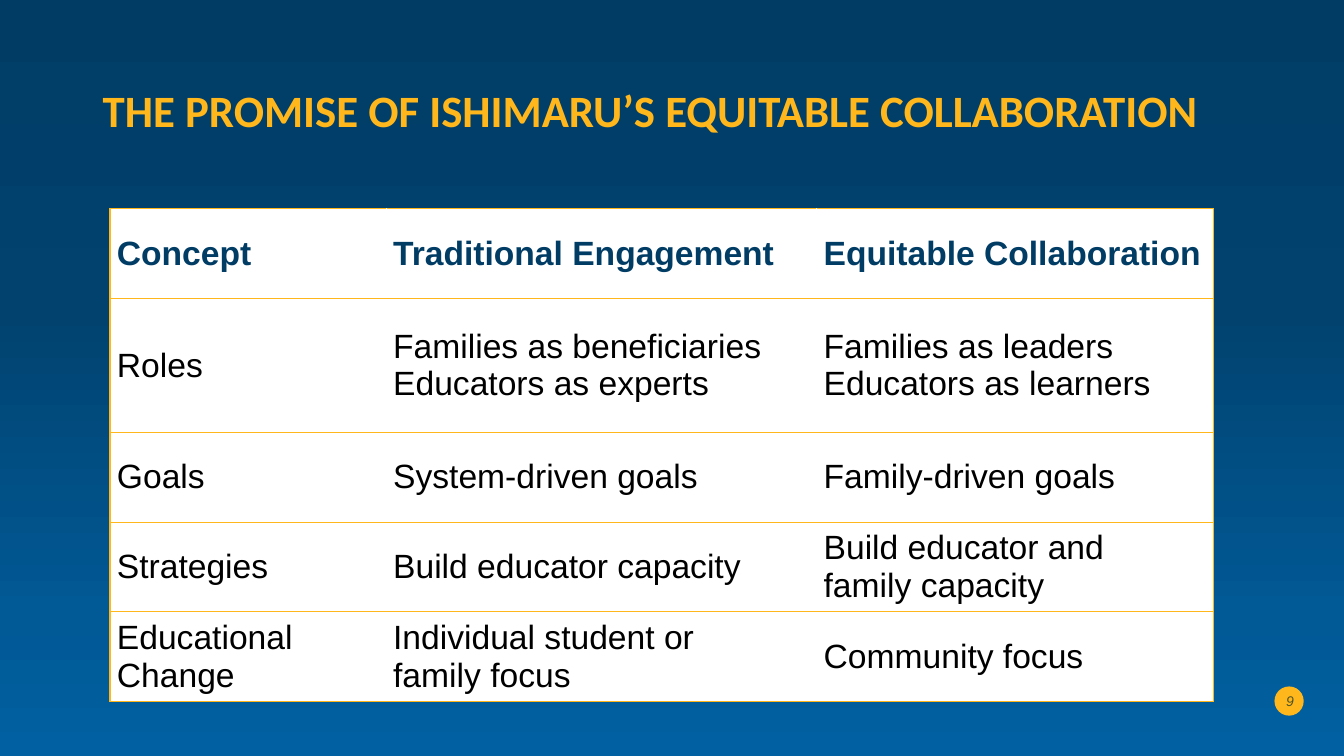
"""Build the slide that compares traditional engagement with equitable collaboration."""
from dataclasses import dataclass

from lxml.etree import SubElement
from pptx import Presentation
from pptx.dml.color import RGBColor as RGB
from pptx.enum.shapes import MSO_SHAPE as SHAPE
from pptx.enum.text import MSO_ANCHOR as ANCHOR, PP_ALIGN as ALIGN
from pptx.oxml import parse_xml
from pptx.oxml.ns import nsdecls, qn
from pptx.util import Inches, Pt


@dataclass(frozen=True)
class Theme:
    gold: str = "FFB71B"
    pale_gold: str = "FFE6B1"
    navy: str = "013C65"
    white: str = "FFFFFF"
    black: str = "000000"
    number: str = "00292E"
    gradient: tuple = ((0, "013C65"), (41, "01426F"), (81, "015995"), (100, "0160A1"))
    title_size: int = 32
    table_size: int = 24
    number_size: int = 10


theme = Theme()


def write_text(tf, text, size, color, font="Arial", bold=False, italic=False, align=ALIGN.LEFT, spacing=None):
    tf.text = text
    tf.word_wrap = True
    tf.vertical_anchor = ANCHOR.MIDDLE
    for p in tf.paragraphs:
        p.alignment = align
        p.line_spacing = spacing
        for r in p.runs:
            r.font.name, r.font.size = font, Pt(size)
            r.font.bold, r.font.italic = bold, italic
            r.font.color.rgb = RGB.from_string(color)


def line_xml(tag, color, points):
    return parse_xml(
        f'<a:{tag} {nsdecls("a")} w="{Pt(points)}"><a:solidFill>'
        f'<a:srgbClr val="{color}"/></a:solidFill></a:{tag}>'
    )


prs = Presentation()
prs.slide_width, prs.slide_height = Inches(13.33), Inches(7.5)
s = prs.slides.add_slide(prs.slide_layouts[6])

bg = s.background.fill
bg.gradient()
bg.gradient_angle = 270
stops = next(s.element.iter(qn("a:gsLst")))
for stop in list(stops):
    stops.remove(stop)
for position, color in theme.gradient:
    stop = SubElement(stops, qn("a:gs"), pos=str(position * 1000))
    SubElement(stop, qn("a:srgbClr"), val=color)

badge = s.shapes.add_shape(SHAPE.OVAL, Inches(12.64), Inches(6.81), Inches(0.29), Inches(0.29))
badge.shadow.inherit = False
badge.fill.solid()
badge.fill.fore_color.rgb = RGB.from_string(theme.gold)
badge.line.fill.background()

title = s.shapes.add_textbox(Inches(0.92), Inches(0.4), Inches(11.5), Inches(1.45))
write_text(title.text_frame, "THE PROMISE OF ISHIMARU’S EQUITABLE COLLABORATION",
           theme.title_size, theme.gold, font="Calibri", bold=True, spacing=0.9)
for props in title.element.iter(qn("a:rPr")):
    props.insert(0, line_xml("ln", theme.pale_gold, 0.75))

rows = [
    ("Concept", "Traditional Engagement", "Equitable Collaboration"),
    ("Roles", "Families as beneficiaries\nEducators as experts", "Families as leaders\nEducators as learners"),
    ("Goals", "System-driven goals", "Family-driven goals"),
    ("Strategies", "Build educator capacity", "Build educator and\vfamily capacity"),
    ("Educational Change", "Individual student or\vfamily focus", "Community focus"),
]
widths = (2.74, 4.27, 3.94)
heights = (0.89, 1.33, 0.89, 0.89, 0.89)
frame = s.shapes.add_table(len(rows), len(widths), Inches(1.09), Inches(2.07),
                           Inches(sum(widths)), Inches(sum(heights)))
table = frame.table
for column, width in zip(table.columns, widths):
    column.width = Inches(width)
for i, (row, height) in enumerate(zip(rows, heights)):
    table.rows[i].height = Inches(height)
    for j, text in enumerate(row):
        cell = table.cell(i, j)
        cell.margin_left = cell.margin_right = Inches(0.07)
        cell.margin_top = cell.margin_bottom = 0
        cell.vertical_anchor = ANCHOR.MIDDLE
        write_text(cell.text_frame, text, theme.table_size,
                   theme.navy if i == 0 else theme.black, bold=i == 0)
        edges = {0: ["lnL"], len(widths) - 1: ["lnR"]}.get(j, []) + ["lnT", "lnB"]
        props = cell._tc.get_or_add_tcPr()
        for edge in edges:
            props.append(line_xml(edge, theme.gold, 1))
        cell.fill.solid()
        cell.fill.fore_color.rgb = RGB.from_string(theme.white)

number = s.shapes.add_textbox(Inches(12.54), Inches(6.75), Inches(0.39), Inches(0.4))
write_text(number.text_frame, "9", theme.number_size, theme.number, italic=True, align=ALIGN.RIGHT)
for color in number.element.iter(qn("a:srgbClr")):
    SubElement(color, qn("a:alpha"), val="70000")

prs.save("out.pptx")
